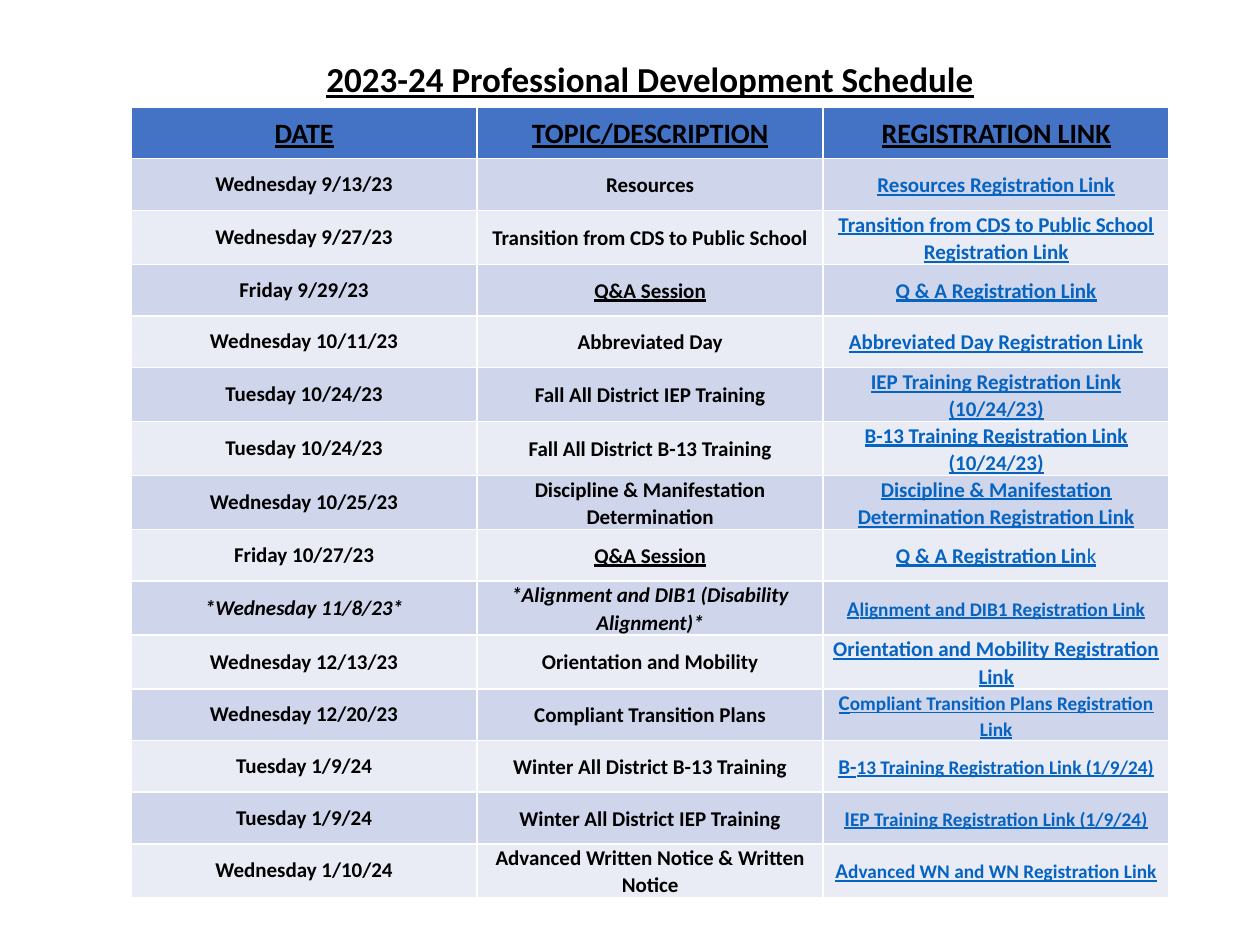
"""Build the 2023-24 professional development schedule slide."""
from dataclasses import dataclass

from pptx import Presentation
from pptx.dml.color import RGBColor
from pptx.enum.text import MSO_ANCHOR, MSO_AUTO_SIZE, PP_ALIGN
from pptx.util import Inches, Pt


@dataclass(frozen=True)
class Theme:
    font: str = "Calibri"
    text: str = "000000"
    link: str = "0563C1"
    header: str = "4472C4"
    bands: tuple = ("CFD5EA", "E9EBF5")
    title_size: int = 20
    header_size: int = 16
    body_size: int = 12
    small_size: int = 11


theme = Theme()


def add_span(para, text, size=theme.body_size, color=theme.text, bold=True, italic=False, underline=False):
    span = para.add_run()
    span.text = text
    span.font.name = theme.font
    span.font.size = Pt(size)
    span.font.color.rgb = RGBColor.from_string(color)
    span.font.bold = bold
    span.font.italic = italic
    span.font.underline = underline


small = {"size": theme.small_size}
headings = ["DATE", "TOPIC/DESCRIPTION", "REGISTRATION LINK"]
sessions = [
    ("Wednesday 9/13/23", "Resources", [("Resources Registration Link", {})]),
    ("Wednesday 9/27/23", "Transition from CDS to Public School",
     [("Transition from CDS to Public School Registration Link", {})]),
    ("Friday 9/29/23", "Q&A Session", [("Q & A Registration Link", {})]),
    ("Wednesday 10/11/23", "Abbreviated Day", [("Abbreviated Day Registration Link", {})]),
    ("Tuesday 10/24/23", "Fall All District IEP Training",
     [("IEP Training Registration Link (10/24/23)", {})]),
    ("Tuesday 10/24/23", "Fall All District B-13 Training",
     [("B-13 Training Registration Link (10/24/23)", {})]),
    ("Wednesday 10/25/23", "Discipline & Manifestation Determination",
     [("Discipline & Manifestation Determination Registration Link", {})]),
    ("Friday 10/27/23", "Q&A Session", [("Q & A Registration Lin", {}), ("k", {"bold": False})]),
    ("*Wednesday 11/8/23*", "*Alignment and DIB1 (Disability Alignment)*",
     [("A", {}), ("lignment and DIB1 Registration Link", small)]),
    ("Wednesday 12/13/23", "Orientation and Mobility",
     [("Orientation and Mobility Registration Link", {})]),
    ("Wednesday 12/20/23", "Compliant Transition Plans",
     [("C", {}), ("ompliant Transition Plans Registration Link", small)]),
    ("Tuesday 1/9/24", "Winter All District B-13 Training",
     [("B-", {}), ("13 Training Registration Link (1/9/24)", small)]),
    ("Tuesday 1/9/24", "Winter All District IEP Training",
     [("I", {}), ("EP Training Registration Link (1/9/24)", small)]),
    ("Wednesday 1/10/24", "Advanced Written Notice & Written Notice",
     [("A", {}), ("dvanced WN and WN Registration Link", small)]),
]

deck = Presentation()
deck.slide_width, deck.slide_height = Inches(10), Inches(7.5)
page = deck.slides.add_slide(deck.slide_layouts[5])

title = page.shapes.title
title.left, title.top, title.width, title.height = Inches(2.13), Inches(0.41), Inches(6.06), Inches(0.44)
title.text_frame.word_wrap = True
title.text_frame.auto_size = MSO_AUTO_SIZE.SHAPE_TO_FIT_TEXT
title.text_frame.vertical_anchor = MSO_ANCHOR.TOP
title_para = title.text_frame.paragraphs[0]
title_para.alignment = PP_ALIGN.CENTER
add_span(title_para, "2023-24 Professional Development Schedule", size=theme.title_size, underline=True)

header_format = {"size": theme.header_size, "underline": True}
rows = [[[(heading, header_format)] for heading in headings]]
for date, topic, link in sessions:
    starred = date.startswith("*")
    rows.append([
        [(date, {"italic": starred})],
        [(topic, {"italic": starred, "underline": topic == "Q&A Session"})],
        [(text, {"color": theme.link, "underline": True, **style}) for text, style in link],
    ])

row_height = Inches(0.41)
schedule = page.shapes.add_table(
    len(rows), len(headings), Inches(1.04), Inches(0.85), Inches(8.24), row_height * len(rows)
).table
for row_index, row in enumerate(rows):
    schedule.rows[row_index].height = row_height
    fill_color = theme.bands[(row_index - 1) % 2] if row_index else theme.header
    for column_index, spans in enumerate(row):
        cell = schedule.cell(row_index, column_index)
        cell.fill.solid()
        cell.fill.fore_color.rgb = RGBColor.from_string(fill_color)
        cell.vertical_anchor = MSO_ANCHOR.MIDDLE
        cell.margin_left = cell.margin_right = Inches(0.07)
        cell.margin_top = cell.margin_bottom = Inches(0)
        para = cell.text_frame.paragraphs[0]
        para.alignment = PP_ALIGN.CENTER
        para.space_before = Pt(0)
        para.space_after = Pt(3)
        if row_index == 0 or column_index > 0:
            para.line_spacing = 1.07
        for text, style in spans:
            add_span(para, text, **style)

deck.save("out.pptx")
